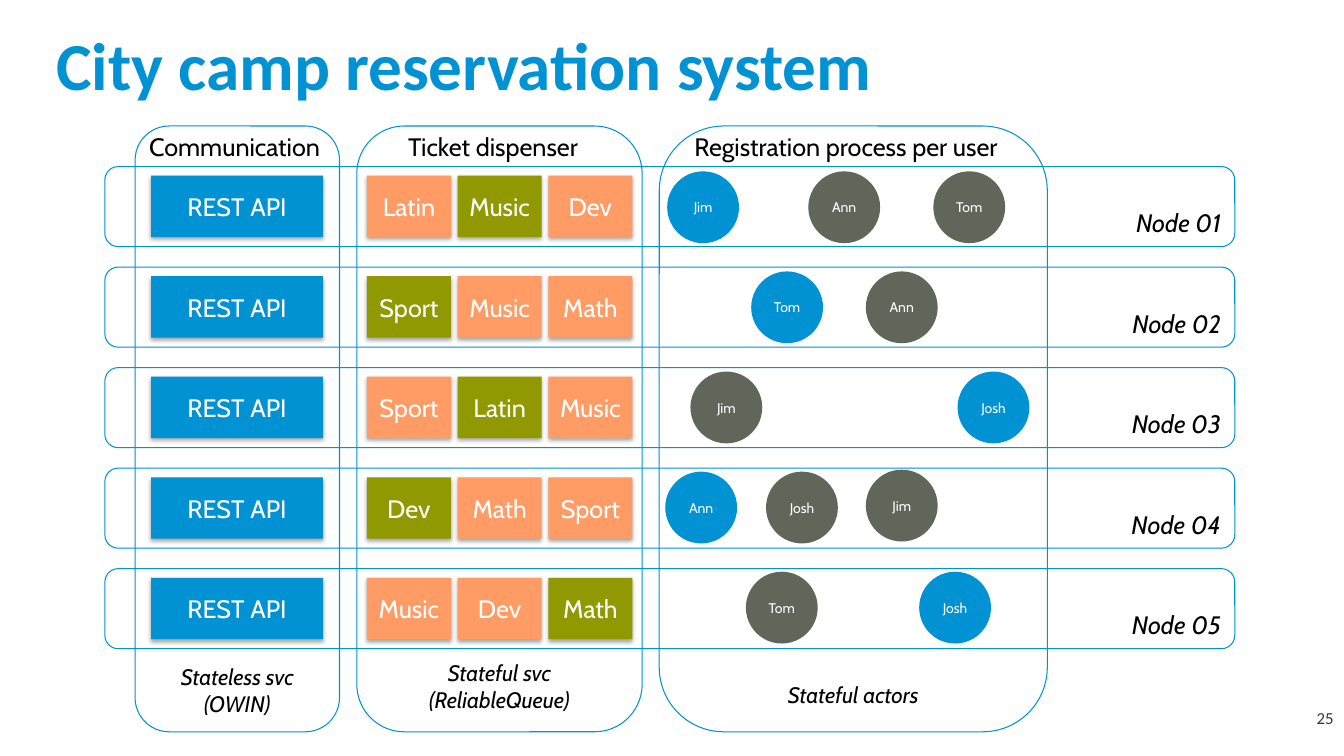
from dataclasses import dataclass

from lxml import etree
from pptx import Presentation
from pptx import util as u
from pptx.dml import color
from pptx.enum import shapes, text

HUES: dict[str, str] = {
    "blue": "0092D3",
    "peach": "FF9C66",
    "olive": "909900",
    "grey": "626559",
    "black": "000000",
    "white": "FFFFFF",
    "ink": "363731",
}
KIND = shapes.MSO_SHAPE
SIDE = text.PP_ALIGN
ANCHOR = text.MSO_ANCHOR
DRAW = "http://schemas.openxmlformats.org/drawingml/2006/main"
PITCH = 71.8
DOT_PITCH = 71.5
DOT = 51.3


@dataclass(frozen=True)
class Box:
    left: float
    top: float
    width: float
    height: float


@dataclass(frozen=True)
class Style:
    size: float
    hue: str = "white"
    side: SIDE = SIDE.CENTER
    anchor: ANCHOR = ANCHOR.MIDDLE
    bold: bool = False
    slant: bool = False
    font: str = "Cabin"


@dataclass(frozen=True)
class Column:
    left: float
    width: float
    head: str
    head_left: float
    head_width: float
    foot: str


@dataclass(frozen=True)
class Actor:
    name: str
    left: float
    hue: str = "grey"
    lift: float = 0


@dataclass(frozen=True)
class Node:
    topics: tuple[str, str, str]
    main: int
    actors: tuple[Actor, ...]


TITLE = Style(48, "blue", SIDE.LEFT, bold=True, font="Calibri")
PAGE = Style(12, "ink", SIDE.RIGHT, font="Calibri")
HEAD = Style(18, "black", SIDE.LEFT, ANCHOR.TOP)
FOOT = Style(16, "black", anchor=ANCHOR.BOTTOM, slant=True)
LABEL = Style(18, "black", SIDE.RIGHT, ANCHOR.BOTTOM, slant=True)
TILE = Style(18)
NAME = Style(10)

COLUMNS = (
    Column(96.5, 146, "Communication", 99.4, 138.2, "Stateless svc (OWIN)"),
    Column(254.9, 203.8, "Ticket dispenser", 284.4, 144, "Stateful svc (ReliableQueue)"),
    Column(470.9, 277.2, "Registration process per user", 488.9, 247.7, "Stateful actors"),
)
NODES = (
    Node(("Latin", "Music", "Dev"), 1,
         (Actor("Jim", 476.6, "blue"), Actor("Ann", 577.4), Actor("Tom", 666.7))),
    Node(("Sport", "Music", "Math"), 0,
         (Actor("Tom", 536.6, "blue"), Actor("Ann", 618.5))),
    Node(("Sport", "Latin", "Music"), 1,
         (Actor("Jim", 493.2), Actor("Josh", 684, "blue"))),
    Node(("Dev", "Math", "Sport"), 0,
         (Actor("Ann", 475.2, "blue"), Actor("Josh", 547.2), Actor("Jim", 618.5, lift=1.4))),
    Node(("Music", "Dev", "Math"), 2,
         (Actor("Tom", 532.8), Actor("Josh", 656.6, "blue"))),
)


def tint(name: str) -> color.RGBColor:
    return color.RGBColor.from_string(HUES[name])


def place(box: Box) -> tuple[u.Length, ...]:
    return tuple(u.Pt(n) for n in (box.left, box.top, box.width, box.height))


def write(shape, words: str, style: Style, wrap: bool = True) -> None:
    frame = shape.text_frame
    frame.word_wrap = wrap
    frame.auto_size = (text.MSO_AUTO_SIZE.NONE if wrap
                       else text.MSO_AUTO_SIZE.SHAPE_TO_FIT_TEXT)
    frame.vertical_anchor = style.anchor
    line = frame.paragraphs[0]
    line.alignment = style.side
    run = line.add_run()
    run.text = words
    run.font.name = style.font
    run.font.size = u.Pt(style.size)
    run.font.bold = style.bold
    run.font.italic = style.slant
    run.font.color.rgb = tint(style.hue)


def shade(shape) -> None:
    effects = shape.element.spPr.find(f"{{{DRAW}}}effectLst")
    outer = etree.SubElement(effects, f"{{{DRAW}}}outerShdw", blurRad=str(u.Pt(3.1)),
                             dist=str(u.Pt(1.8)), dir="5400000", rotWithShape="0")
    black = etree.SubElement(outer, f"{{{DRAW}}}srgbClr", val=HUES["black"])
    etree.SubElement(black, f"{{{DRAW}}}alpha", val="35000")


def solid(slide, kind: KIND, box: Box, hue: str, words: str, style: Style):
    shape = slide.shapes.add_shape(kind, *place(box))
    shape.shadow.inherit = False
    shape.fill.solid()
    shape.fill.fore_color.rgb = tint(hue)
    shape.line.fill.background()
    write(shape, words, style)
    return shape


def tile(slide, box: Box, hue: str, words: str) -> None:
    shade(solid(slide, KIND.RECTANGLE, box, hue, words, TILE))


def outline(slide, box: Box, words: str, style: Style) -> None:
    shape = slide.shapes.add_shape(KIND.ROUNDED_RECTANGLE, *place(box))
    shape.shadow.inherit = False
    shape.fill.background()
    shape.line.color.rgb = tint("blue")
    shape.line.width = u.Pt(0.75)
    write(shape, words, style)


def caption(slide, box: Box, words: str, style: Style, wrap: bool = True) -> None:
    write(slide.shapes.add_textbox(*place(box)), words, style, wrap)


def main() -> None:
    deck = Presentation()
    deck.slide_width, deck.slide_height = u.Pt(960), u.Pt(540)
    slide = deck.slides.add_slide(deck.slide_layouts[5])
    title = slide.shapes.title
    title.left, title.top, title.width, title.height = place(Box(33.1, 21.6, 806.4, 48.2))
    write(title, "City camp reservation system", TITLE)

    for row, node in enumerate(NODES):
        step = row * PITCH
        outline(slide, Box(74.9, 119 + step, 807.1, 57.2), f"Node {row + 1:02}", LABEL)
        tile(slide, Box(108, 125.5 + step, 122.6, 43.9), "blue", "REST API")
        for col, topic in enumerate(node.topics):
            hue = "olive" if col == node.main else "peach"
            tile(slide, Box(262.1 + col * 64.8, 125.5 + step, 60, 43.9), hue, topic)

    for column in COLUMNS:
        outline(slide, Box(column.left, 90, column.width, 432.7), column.foot, FOOT)
        caption(slide, Box(column.head_left, 90, column.head_width, 28.8),
                column.head, HEAD, wrap=False)

    for row, node in enumerate(NODES):
        for actor in node.actors:
            top = 122.4 + row * DOT_PITCH - actor.lift
            solid(slide, KIND.OVAL, Box(actor.left, top, DOT, DOT),
                  actor.hue, actor.name, NAME)

    caption(slide, Box(926.6, 503.3, 33.1, 19.4), "25", PAGE)
    deck.save("out.pptx")


if __name__ == "__main__":
    main()
